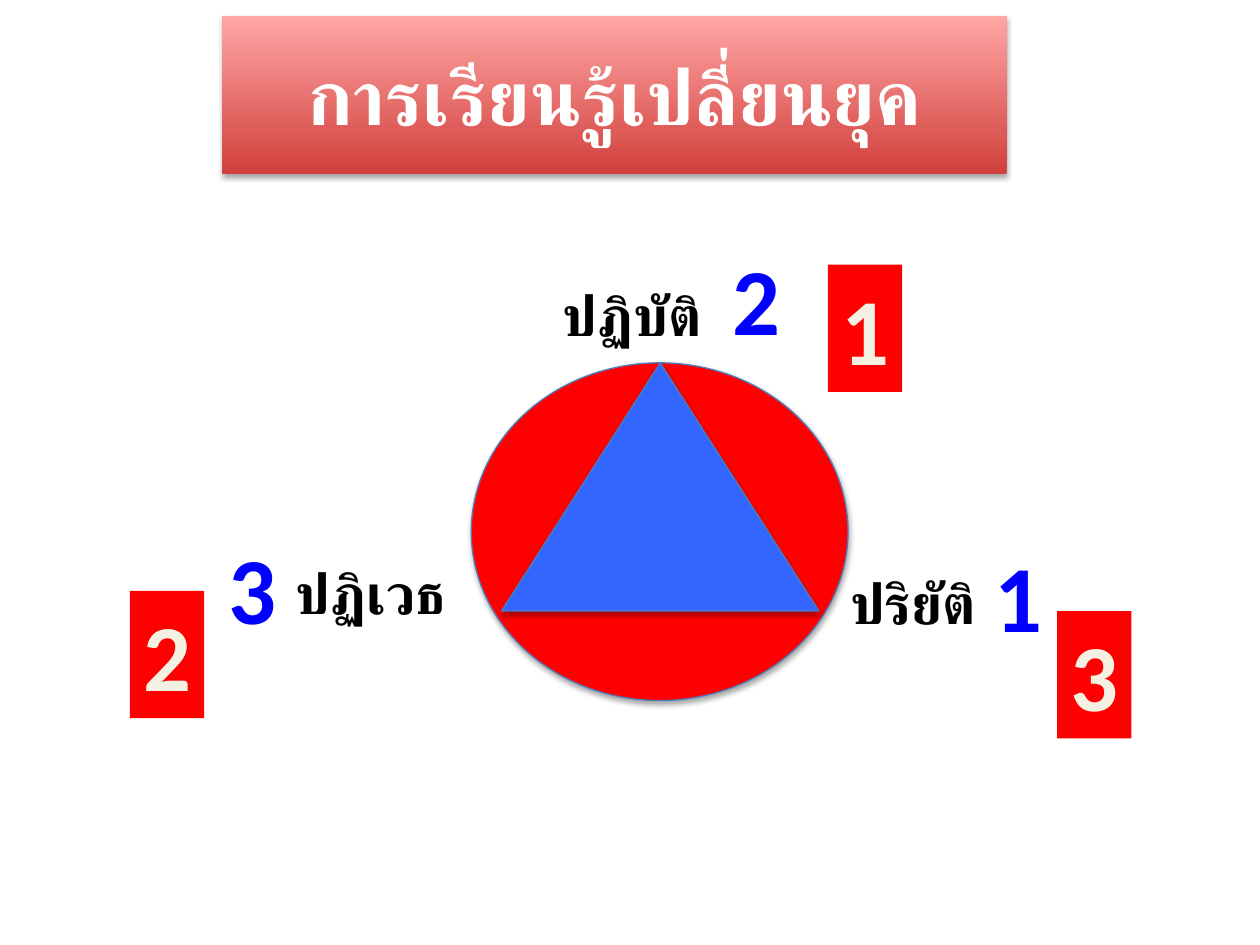
from lxml import etree
from pptx import Presentation, util as u
from pptx.dml.color import RGBColor
from pptx.enum import shapes, text
from pptx.oxml.ns import qn

RED = RGBColor(0xFF, 0x00, 0x00)
BLUE = RGBColor(0x33, 0x66, 0xFF)
EDGE = RGBColor(0x4B, 0x7E, 0xBC)
DIGIT_BLUE = RGBColor(0x00, 0x00, 0xFF)
DIGIT_CREAM = RGBColor(0xF4, 0xF1, 0xE3)
DIGIT_EDGE = RGBColor(0x05, 0x46, 0x97)
BLACK = RGBColor(0x00, 0x00, 0x00)
WHITE = RGBColor(0xFF, 0xFF, 0xFF)
TITLE_DARK = RGBColor(0xD1, 0x40, 0x3C)
TITLE_LIGHT = RGBColor(0xFF, 0xA6, 0xA5)


def child(parent, tag, **attributes):
    return etree.SubElement(parent, qn(tag), attributes)


class Board:
    columns, rows = 100, 75
    font = {"name": "Calibri", "bold": True}
    frame = {"auto_size": text.MSO_AUTO_SIZE.SHAPE_TO_FIT_TEXT, "word_wrap": False}
    shadow = {"blurRad": "40000", "dist": "23000", "dir": "5400000", "rotWithShape": "0"}

    def __init__(self, presentation):
        self.width = presentation.slide_width
        self.height = presentation.slide_height
        self.slide = presentation.slides.add_slide(presentation.slide_layouts[5])

    def place(self, left, top, width, height):
        column, row = self.width / self.columns, self.height / self.rows
        return [int(left * column), int(top * row), int(width * column), int(height * row)]

    def apply(self, target, values):
        for name, value in values.items():
            setattr(target, name, value)

    def add_words(self, shape, words, size, color, align):
        paragraph = shape.text_frame.paragraphs[0]
        paragraph.alignment = align
        run = paragraph.add_run()
        run.text = words
        self.apply(run.font, {**self.font, "size": u.Pt(size)})
        run.font.color.rgb = color
        return run

    def cast_shadow(self, shape):
        shape.shadow.inherit = False
        effects = shape._element.spPr.find(qn("a:effectLst"))
        outer = child(effects, "a:outerShdw", **self.shadow)
        color = child(outer, "a:srgbClr", val="000000")
        child(color, "a:alpha", val="35000")

    def title(self, words, box):
        shape = self.slide.shapes.title
        self.apply(shape, dict(zip(("left", "top", "width", "height"), self.place(*box))))
        shape.fill.gradient()
        shape.fill.gradient_angle = 90
        for stop, position, color in zip(shape.fill.gradient_stops, (0, 1), (TITLE_DARK, TITLE_LIGHT)):
            stop.position = position
            stop.color.rgb = color
        self.cast_shadow(shape)
        shape.text_frame.vertical_anchor = text.MSO_ANCHOR.MIDDLE
        self.add_words(shape, words, 44, WHITE, text.PP_ALIGN.CENTER)

    def figure(self, kind, box, color):
        shape = self.slide.shapes.add_shape(kind, *self.place(*box))
        shape.fill.solid()
        shape.fill.fore_color.rgb = color
        shape.line.color.rgb = EDGE
        shape.line.width = u.Pt(0.75)
        self.cast_shadow(shape)

    def label(self, words, box, size=32, color=BLACK, align=text.PP_ALIGN.LEFT):
        shape = self.slide.shapes.add_textbox(*self.place(*box))
        self.apply(shape.text_frame, self.frame)
        return shape, self.add_words(shape, words, size, color, align)

    def digit(self, words, left, top, color=DIGIT_BLUE, back=None):
        box = (left, top, 5.9, 10.1)
        shape, run = self.label(words, box, 54, color, text.PP_ALIGN.CENTER)
        if back is not None:
            shape.fill.solid()
            shape.fill.fore_color.rgb = back
        outline = etree.Element(qn("a:ln"), w="12700")
        child(child(outline, "a:solidFill"), "a:srgbClr", val=str(DIGIT_EDGE))
        run.font._element.insert(0, outline)


def main():
    presentation = Presentation()
    presentation.slide_width, presentation.slide_height = u.Inches(10), u.Inches(7.5)
    board = Board(presentation)
    board.figure(shapes.MSO_SHAPE.OVAL, (37.4, 28.8, 29.9, 26.8), RED)
    board.title("การเรียนรู้เปลี่ยนยุค", (17.6, 1.3, 62.3, 12.5))
    board.figure(shapes.MSO_SHAPE.ISOSCELES_TRIANGLE, (39.8, 28.8, 25.2, 19.7), BLUE)

    for words, left, top, width in (
        ("ปฏิบัติ", 43.7, 21.8, 13.7),
        ("ปริยัติ", 66.5, 44.6, 12.7),
        ("ปฏิเวธ", 22.5, 43.8, 14.1),
    ):
        board.label(words, (left, top, width, 6.4))

    for words, left, top in (("1", 77.9, 42.2), ("2", 57.1, 18.6), ("3", 17.1, 41.6)):
        board.digit(words, left, top)
    for words, left, top in (("1", 65.7, 21), ("2", 10.3, 46.9), ("3", 83.9, 48.5)):
        board.digit(words, left, top, DIGIT_CREAM, RED)

    presentation.save("out.pptx")


if __name__ == "__main__":
    main()
